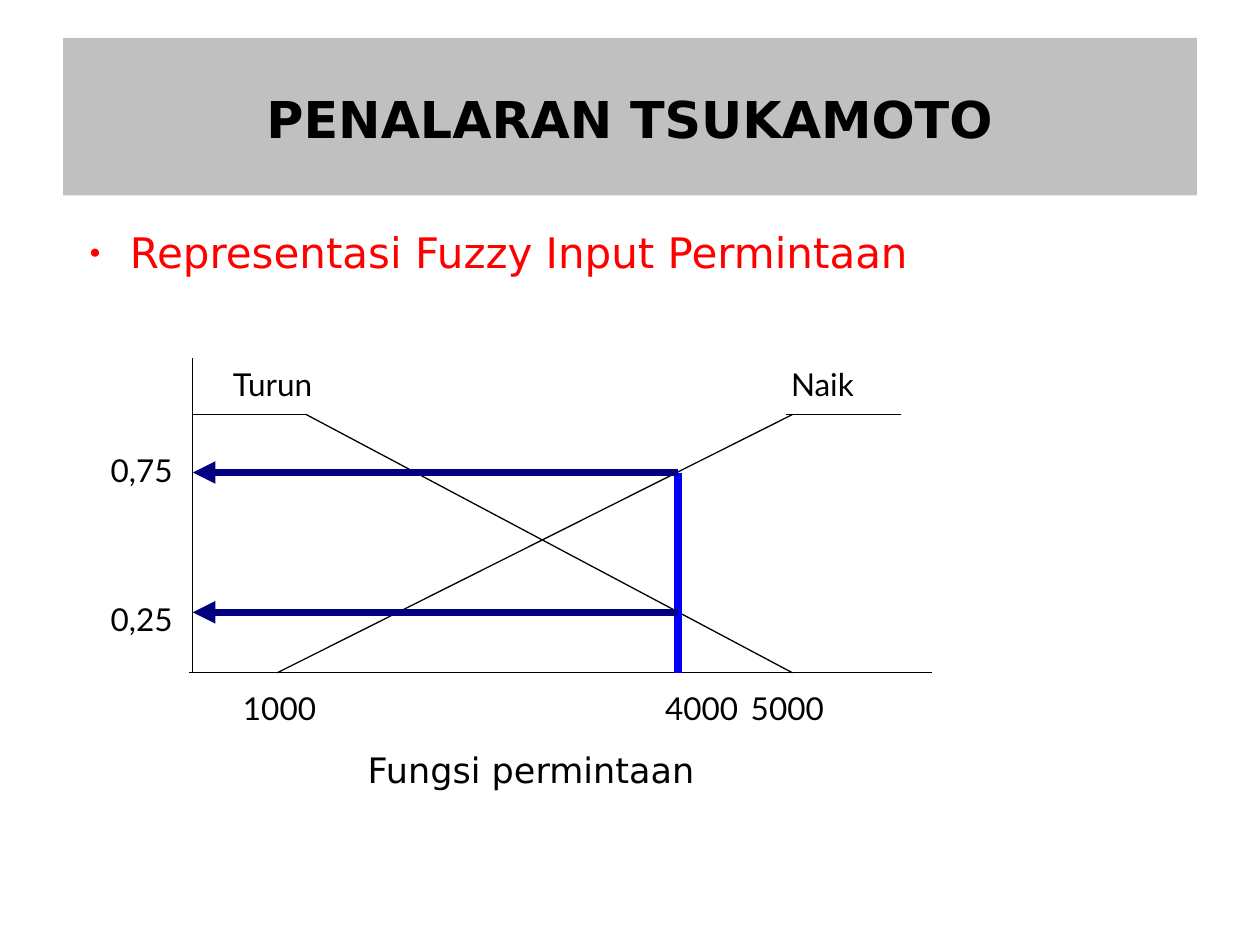
from lxml.etree import SubElement
from pptx import Presentation
from pptx.dml.color import RGBColor
from pptx.enum.shapes import MSO_CONNECTOR
from pptx.enum.text import MSO_ANCHOR, MSO_AUTO_SIZE, PP_ALIGN
from pptx.oxml.ns import qn
from pptx.util import Inches, Pt

BLACK, RED, GRAY = "000000", "FF0000", "C0C0C0"
BLUE, NAVY = "0000FF", "000080"
HEADING_FONT, LABEL_FONT = "DejaVu Sans", "Lato"

AXIS_X, AXIS_Y = 1.53, 5.34
FULL_Y = 3.29
DEMAND_X = 5.38
RISE_Y, FALL_Y = 3.75, 4.86
START_X, END_X = 2.2, 6.29


def color(hex_string):
    return RGBColor.from_string(hex_string)


def place(shape, left, top, width, height):
    shape.left, shape.top = Inches(left), Inches(top)
    shape.width, shape.height = Inches(width), Inches(height)


def style(paragraph, name, size, hex_string, bold=False):
    font = paragraph.font
    font.name, font.size, font.bold = name, Pt(size), bold
    font.color.rgb = color(hex_string)


def fill_title(title, text):
    place(title, 0.5, 0.3, 9, 1.25)
    title.fill.solid()
    title.fill.fore_color.rgb = color(GRAY)
    frame = title.text_frame
    frame.text = text
    frame.auto_size = MSO_AUTO_SIZE.NONE
    frame.vertical_anchor = MSO_ANCHOR.MIDDLE
    frame.margin_left = frame.margin_right = frame.margin_bottom = 0
    frame.margin_top = Inches(0.03)
    paragraph = frame.paragraphs[0]
    paragraph.alignment = PP_ALIGN.CENTER
    style(paragraph, HEADING_FONT, 29, BLACK, bold=True)


def fill_body(body, text):
    place(body, 0.5, 1.75, 9, 4.95)
    frame = body.text_frame
    frame.text = text
    frame.auto_size = MSO_AUTO_SIZE.NONE
    paragraph = frame.paragraphs[0]
    paragraph.space_before = Pt(0)
    properties = paragraph._p.get_or_add_pPr()
    properties.set("marL", str(Inches(0.43)))
    properties.set("indent", str(Inches(-0.32)))
    SubElement(properties, qn("a:buSzPct"), val="45000")
    SubElement(properties, qn("a:buChar"), char="●")
    style(paragraph, HEADING_FONT, 24, RED)


def add_line(slide, start, end, hex_string=BLACK, width=0.75, arrow=False):
    ends = [Inches(value) for value in (*start, *end)]
    line = slide.shapes.add_connector(MSO_CONNECTOR.STRAIGHT, *ends)
    line.line.color.rgb = color(hex_string)
    line.line.width = Pt(width)
    if arrow:
        SubElement(line.line._get_or_add_ln(), qn("a:tailEnd"), type="triangle")
    SubElement(line._element.spPr, qn("a:effectLst"))


def add_label(slide, text, left, top, width, height=0.37,
              font=LABEL_FONT, size=18, spacing=1.04, margin_top=0.05):
    box = slide.shapes.add_textbox(
        Inches(left), Inches(top), Inches(width), Inches(height))
    frame = box.text_frame
    frame.word_wrap = False
    frame.margin_top = Inches(margin_top)
    frame.margin_right = 0
    frame.text = text
    paragraph = frame.paragraphs[0]
    paragraph.line_spacing = spacing
    style(paragraph, font, size, BLACK)


def draw_membership(slide):
    for start, end in (
        ((AXIS_X, 2.84), (AXIS_X, AXIS_Y)),
        ((1.5, AXIS_Y), (7.4, AXIS_Y)),
        ((AXIS_X, FULL_Y), (2.43, FULL_Y)),
        ((2.43, FULL_Y), (END_X, AXIS_Y)),
        ((6.24, FULL_Y), (7.15, FULL_Y)),
        ((END_X, FULL_Y), (START_X, AXIS_Y)),
    ):
        add_line(slide, start, end)


def draw_demand(slide):
    add_line(slide, (DEMAND_X, AXIS_Y), (DEMAND_X, RISE_Y), BLUE, 4.31)
    for degree_y in (RISE_Y, FALL_Y):
        add_line(slide, (DEMAND_X, degree_y), (AXIS_X, degree_y),
                 NAVY, 4.31, arrow=True)


def label_graph(slide):
    add_label(slide, "Turun", 1.75, 2.84, 0.78)
    add_label(slide, "Naik", 6.18, 2.84, 0.64)
    for demand, left in (("1000", 1.83), ("4000", 5.18), ("5000", 5.86)):
        add_label(slide, demand, left, 5.41, 0.71)
    for degree, top in (("0,75", 3.52), ("0,25", 4.7)):
        add_label(slide, degree, 0.78, top, 0.64)
    add_label(slide, "Fungsi permintaan", 2.82, 5.87, 2.75, 0.4,
              font=HEADING_FONT, size=20, spacing=1.0, margin_top=0.07)


def main():
    presentation = Presentation()
    presentation.slide_width, presentation.slide_height = Inches(10), Inches(7.5)
    slide = presentation.slides.add_slide(presentation.slide_layouts[1])
    fill_title(slide.shapes.title, "PENALARAN TSUKAMOTO")
    fill_body(slide.placeholders[1], "Representasi Fuzzy Input Permintaan")
    draw_membership(slide)
    draw_demand(slide)
    label_graph(slide)
    presentation.save("out.pptx")


if __name__ == "__main__":
    main()
